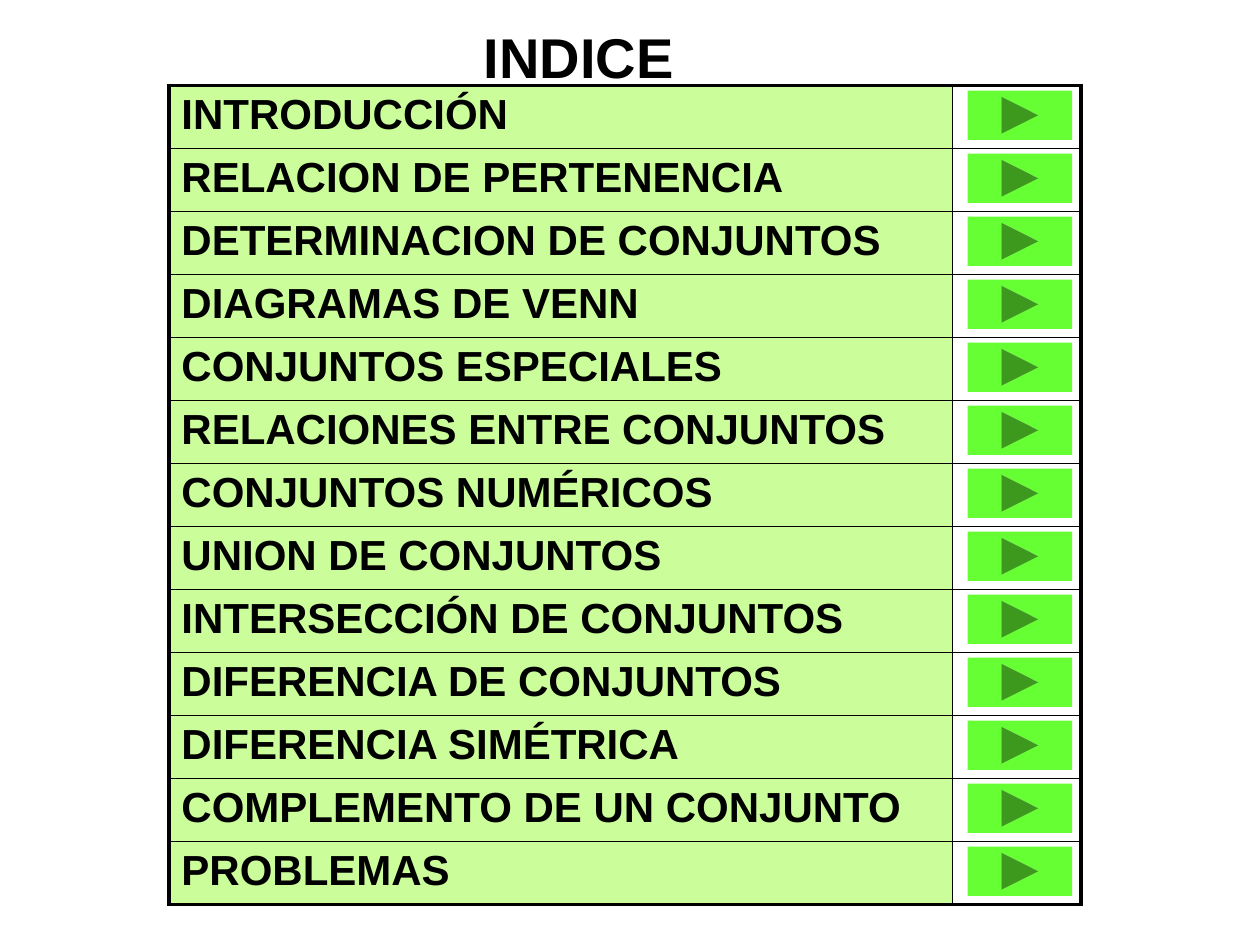
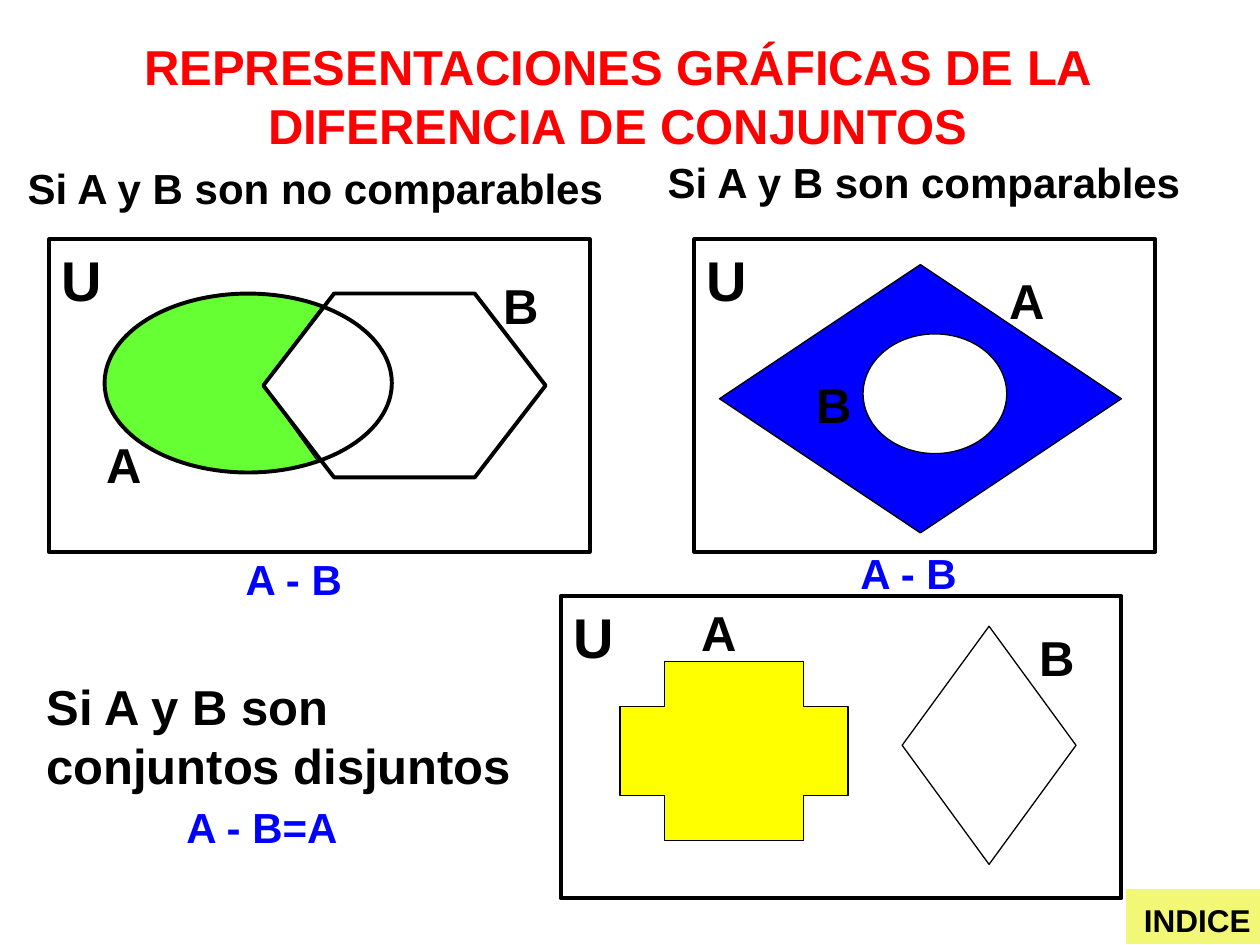
"""Build the index slide and the set difference slide of a lesson on sets."""
import math

import lxml.etree
import pptx
import pptx.dml.color
import pptx.enum.shapes
import pptx.enum.text
import pptx.oxml.ns
import pptx.util

Inches = pptx.util.Inches
Pt = pptx.util.Pt
RGBColor = pptx.dml.color.RGBColor
SHAPE = pptx.enum.shapes.MSO_SHAPE
ALIGN = pptx.enum.text.PP_ALIGN

BLACK = RGBColor(0x00, 0x00, 0x00)
WHITE = RGBColor(0xFF, 0xFF, 0xFF)
RED = RGBColor(0xFF, 0x00, 0x00)
BLUE = RGBColor(0x00, 0x00, 0xFF)
YELLOW = RGBColor(0xFF, 0xFF, 0x00)
GREEN = RGBColor(0x66, 0xFF, 0x33)
PALE_GREEN = RGBColor(0xCC, 0xFD, 0x9B)
PALE_YELLOW = RGBColor(0xF2, 0xF8, 0x76)

THIN, MEDIUM, THICK = 0.75, 1, 2.25
ROW_HEIGHT = 0.5

TOPICS = [
    "INTRODUCCIÓN",
    "RELACION DE PERTENENCIA",
    "DETERMINACION DE CONJUNTOS",
    "DIAGRAMAS DE VENN",
    "CONJUNTOS ESPECIALES",
    "RELACIONES ENTRE CONJUNTOS",
    "CONJUNTOS NUMÉRICOS",
    "UNION DE CONJUNTOS",
    "INTERSECCIÓN DE CONJUNTOS",
    "DIFERENCIA DE CONJUNTOS",
    "DIFERENCIA SIMÉTRICA",
    "COMPLEMENTO DE UN CONJUNTO",
    "PROBLEMAS",
]


class Lesson:
    """Hold the shared style and the slide being drawn."""

    font_name = "Arial"

    def __init__(self):
        self.presentation = pptx.Presentation()
        self.presentation.slide_width = Inches(10)
        self.presentation.slide_height = Inches(7.5)
        self.slide = None

    def set_text(self, text_frame, text, size, color=BLACK, alignment=ALIGN.LEFT):
        """Put one formatted paragraph in a text frame."""
        text_frame.text = text
        paragraph = text_frame.paragraphs[0]
        paragraph.alignment = alignment
        font = paragraph.runs[0].font
        formats = {"name": self.font_name, "size": Pt(size), "bold": True}
        for name, value in formats.items():
            setattr(font, name, value)
        font.color.rgb = color

    def prepare(self, text_frame, wrap=True):
        """Anchor a text frame at its top and fix its size."""
        formats = {
            "word_wrap": wrap,
            "auto_size": pptx.enum.text.MSO_AUTO_SIZE.NONE,
            "vertical_anchor": pptx.enum.text.MSO_ANCHOR.TOP,
        }
        for name, value in formats.items():
            setattr(text_frame, name, value)

    def add_slide(self, title, box, size, color=BLACK, alignment=ALIGN.LEFT):
        """Start a title-only slide and format its title."""
        layout = self.presentation.slide_layouts.get_by_name("Title Only")
        self.slide = self.presentation.slides.add_slide(layout)
        placeholder = self.slide.shapes.title
        for name, length in zip(("left", "top", "width", "height"), box):
            setattr(placeholder, name, Inches(length))
        self.prepare(placeholder.text_frame)
        self.set_text(placeholder.text_frame, title, size, color, alignment)

    def add_text(self, text, box, size, color=BLACK, wrap=True):
        """Add a text box."""
        shape = self.slide.shapes.add_textbox(*map(Inches, box))
        self.prepare(shape.text_frame, wrap)
        self.set_text(shape.text_frame, text, size, color)

    def paint(self, shape, fill, line_width):
        """Set the fill and the outline of a shape."""
        shape.shadow.inherit = False
        if fill is None:
            shape.fill.background()
        else:
            shape.fill.solid()
            shape.fill.fore_color.rgb = fill
        if line_width is None:
            shape.line.fill.background()
        else:
            shape.line.color.rgb = BLACK
            shape.line.width = Pt(line_width)

    def add_shape(self, kind, box, fill=None, line_width=None, adjustment=None):
        """Add a preset shape."""
        shape = self.slide.shapes.add_shape(kind, *map(Inches, box))
        self.paint(shape, fill, line_width)
        if adjustment is not None:
            shape.adjustments[0] = adjustment

    def add_outline(self, points, fill, line_width):
        """Add a closed freeform through points given in inches."""
        corners = [(Inches(x), Inches(y)) for x, y in points]
        builder = self.slide.shapes.build_freeform(*corners[0], scale=1.0)
        builder.add_line_segments(corners[1:], close=True)
        self.paint(builder.convert_to_shape(), fill, line_width)

    def add_universe(self, left, top, width, height):
        """Add the frame of a universal set with its letter."""
        self.add_shape(SHAPE.RECTANGLE, (left, top, width, height), None, THICK)
        self.add_text("U", (left, top, 0.59, 0.63), 32)

    def set_borders(self, cell, widths):
        """Give a cell its left, right, top and bottom borders."""
        properties = cell._tc.get_or_add_tcPr()
        for position, (side, width) in enumerate(zip("LRTB", widths)):
            line = lxml.etree.Element(pptx.oxml.ns.qn(f"a:ln{side}"), w=str(Pt(width)))
            solid = lxml.etree.SubElement(line, pptx.oxml.ns.qn("a:solidFill"))
            lxml.etree.SubElement(solid, pptx.oxml.ns.qn("a:srgbClr"), val=str(BLACK))
            properties.insert(position, line)

    def add_topic_table(self, topics, left, top, column_widths):
        """Add the table of topics with an empty column for buttons."""
        count = len(topics)
        box = (left, top, sum(column_widths), ROW_HEIGHT * count)
        table = self.slide.shapes.add_table(count, 2, *map(Inches, box)).table
        table.first_row = table.horz_banding = False
        for column, width in zip(table.columns, column_widths):
            column.width = Inches(width)
        for index, topic in enumerate(topics):
            topic_cell, button_cell = table.cell(index, 0), table.cell(index, 1)
            self.set_text(topic_cell.text_frame, topic, 24)
            topic_cell.fill.solid()
            topic_cell.fill.fore_color.rgb = PALE_GREEN
            button_cell.fill.background()
            upper = THICK if index == 0 else MEDIUM
            lower = THICK if index == count - 1 else MEDIUM
            self.set_borders(topic_cell, (THICK, MEDIUM, upper, lower))
            self.set_borders(button_cell, (MEDIUM, THICK, upper, lower))


def build_index(lesson):
    """Draw the index with one forward button per topic."""
    lesson.add_slide("INDICE", (3.74, 0.13, 1.85, 0.63), 32)
    lesson.add_topic_table(TOPICS, 1.34, 0.68, (6.22, 1.02))
    for index in range(len(TOPICS)):
        box = (7.68, 0.72 + ROW_HEIGHT * index, 0.83, 0.39)
        lesson.add_shape(SHAPE.ACTION_BUTTON_FORWARD_OR_NEXT, box, GREEN)


def build_difference(lesson):
    """Draw the three cases of the difference of two sets."""
    lesson.add_slide(
        "REPRESENTACIONES GRÁFICAS DE LA DIFERENCIA DE CONJUNTOS",
        (0.65, 0.24, 8.5, 1.03), 28, RED, ALIGN.CENTER)

    lesson.add_text("Si A y B son no comparables", (0.12, 1.24, 4.88, 0.5), 24)
    left, top, width, height = ellipse = (0.83, 2.33, 2.28, 1.42)
    hexagon = (2.09, 2.33, 2.24, 1.46)
    crescent = [(hexagon[0], hexagon[1] + hexagon[3] / 2)]
    for degrees in range(59, 302, 3):
        angle = math.radians(degrees)
        crescent.append((left + width / 2 * (1 + math.cos(angle)),
                         top + height / 2 * (1 - math.sin(angle))))
    lesson.add_outline(crescent, GREEN, THIN)
    lesson.add_universe(0.39, 1.9, 4.29, 2.48)
    lesson.add_shape(SHAPE.HEXAGON, hexagon, None, THICK, 0.385)
    lesson.add_shape(SHAPE.OVAL, ellipse, None, THICK)

    lesson.add_text("Si A y B son comparables", (5.2, 1.19, 4.41, 0.5), 24)
    lesson.add_universe(5.51, 1.9, 3.66, 2.48)
    lesson.add_shape(SHAPE.DIAMOND, (5.71, 2.1, 3.19, 2.13), BLUE, THIN)
    lesson.add_shape(SHAPE.OVAL, (6.85, 2.65, 1.14, 0.95), WHITE, THIN)

    lesson.add_text("Si A y B son conjuntos disjuntos", (0.27, 5.32, 3.98, 1.03), 28)
    lesson.add_universe(4.45, 4.73, 4.45, 2.4)
    lesson.add_shape(SHAPE.CROSS, (4.92, 5.25, 1.81, 1.42), YELLOW, THIN, 0.25)
    lesson.add_shape(SHAPE.DIAMOND, (7.16, 4.97, 1.38, 1.89), WHITE, THIN)

    set_letters = [
        ("A", 0.75, 3.4), ("B", 3.9, 2.14),
        ("A", 7.91, 2.1), ("B", 6.38, 2.92),
        ("A", 5.47, 4.73), ("B", 8.15, 4.93),
    ]
    for letter, left, top in set_letters:
        lesson.add_text(letter, (left, top, 0.55, 0.57), 28)
    results = [("A - B", 1.85, 4.34), ("A - B", 6.73, 4.3), ("A - B=A", 1.38, 6.31)]
    for result, left, top in results:
        lesson.add_text(result, (left, top, 1.81, 0.5), 24, BLUE)

    lesson.add_shape(SHAPE.ACTION_BUTTON_CUSTOM, (8.94, 7.06, 1.06, 0.43), PALE_YELLOW)
    lesson.add_text("INDICE", (8.98, 7.1, 1.02, 0.4), 18, wrap=False)


def main():
    """Build both slides and save them."""
    lesson = Lesson()
    build_index(lesson)
    build_difference(lesson)
    lesson.presentation.save("out.pptx")


if __name__ == "__main__":
    main()
